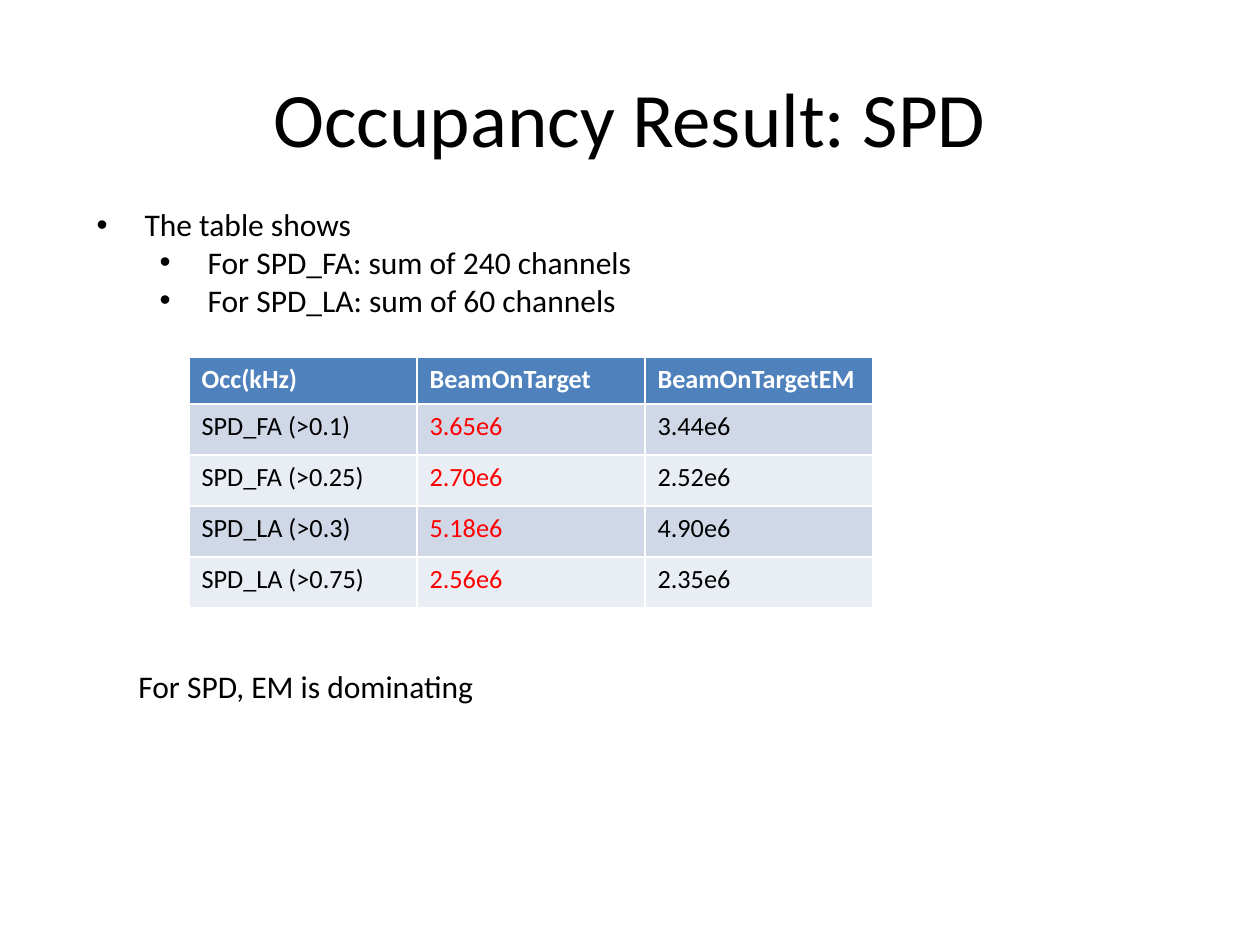
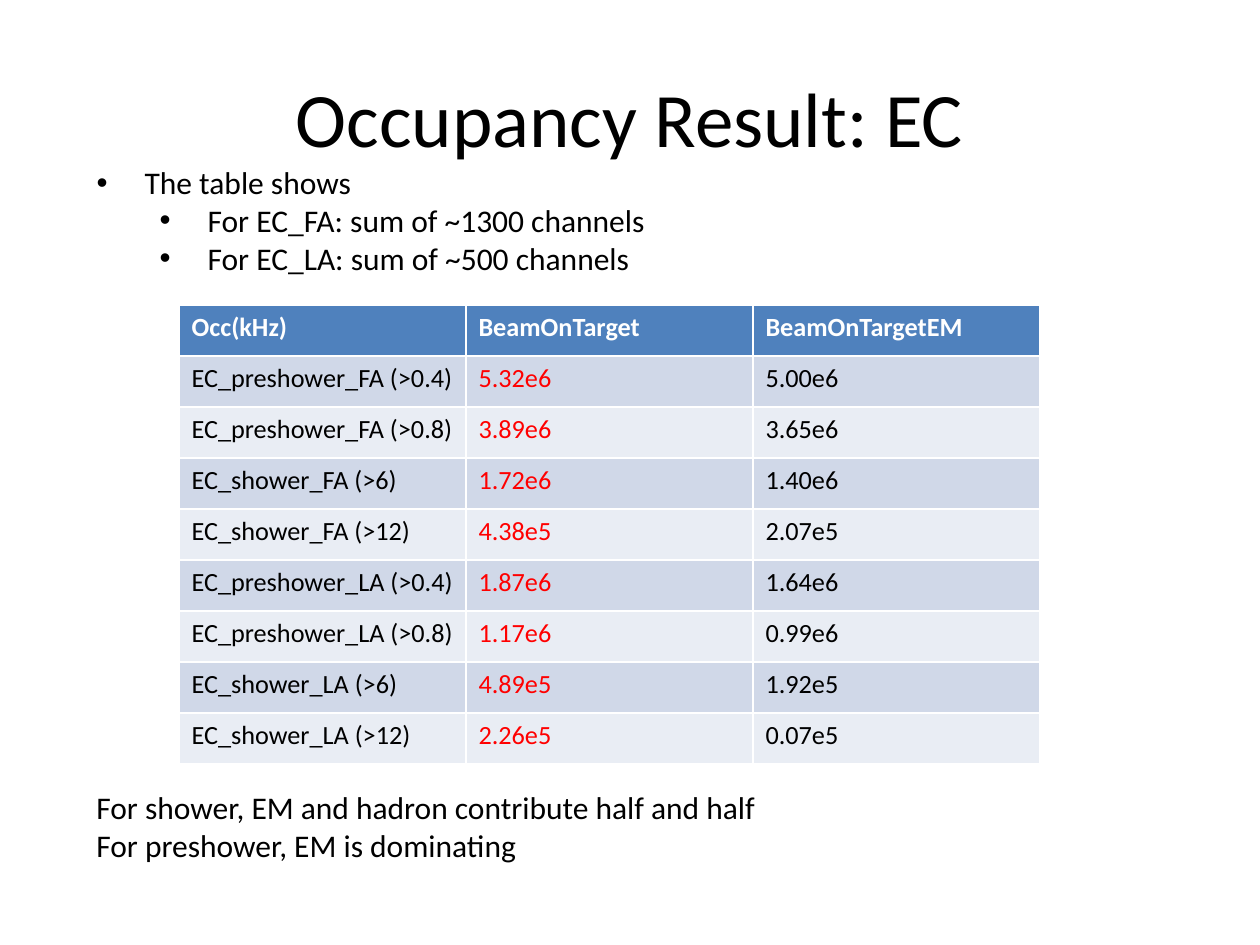
from lxml.etree import SubElement
from pptx import Presentation
from pptx.dml.color import RGBColor
from pptx.enum.text import MSO_ANCHOR, MSO_AUTO_SIZE, PP_ALIGN
from pptx.oxml.ns import qn
from pptx.util import Emu, Pt

PIXELS_PER_INCH = 126
EMU_PER_INCH = 914400
FONT_NAME = "Calibri"

BLACK = RGBColor(0x00, 0x00, 0x00)
WHITE = RGBColor(0xFF, 0xFF, 0xFF)
RED = RGBColor(0xFF, 0x00, 0x00)
HEADER_BLUE = RGBColor(0x4F, 0x81, 0xBD)
BAND_COLORS = [RGBColor(0xE9, 0xED, 0xF4), RGBColor(0xD0, 0xD8, 0xE8)]

TITLE_FORMAT = {"name": FONT_NAME, "size": Pt(44), "bold": False}
BODY_FORMAT = {"name": FONT_NAME, "size": Pt(18), "bold": False}
HEADER_FORMAT = {"name": FONT_NAME, "size": Pt(15), "bold": True}
CELL_FORMAT = {**HEADER_FORMAT, "bold": False}

TABLE_HEADER = ["Occ(kHz)", "BeamOnTarget", "BeamOnTargetEM"]
COLUMN_COLORS = [BLACK, RED, BLACK]
ROW_HEIGHT = 51
TEXT_WIDTH = 892
NOTE_INDENT = 63
BULLET_INDENTS = {1: 111, 2: 174}
BULLET_HANGING = 48

SPD_ROWS = [
    ["SPD_FA (>0.1)", "3.65e6", "3.44e6"],
    ["SPD_FA (>0.25)", "2.70e6", "2.52e6"],
    ["SPD_LA (>0.3)", "5.18e6", "4.90e6"],
    ["SPD_LA (>0.75)", "2.56e6", "2.35e6"],
]
EC_ROWS = [
    ["EC_preshower_FA (>0.4)", "5.32e6", "5.00e6"],
    ["EC_preshower_FA (>0.8)", "3.89e6", "3.65e6"],
    ["EC_shower_FA (>6)", "1.72e6", "1.40e6"],
    ["EC_shower_FA (>12)", "4.38e5", "2.07e5"],
    ["EC_preshower_LA (>0.4)", "1.87e6", "1.64e6"],
    ["EC_preshower_LA (>0.8)", "1.17e6", "0.99e6"],
    ["EC_shower_LA (>6)", "4.89e5", "1.92e5"],
    ["EC_shower_LA (>12)", "2.26e5", "0.07e5"],
]


def px(length):
    return Emu(round(length * EMU_PER_INCH / PIXELS_PER_INCH))


def set_attributes(target, values):
    for name, value in values.items():
        setattr(target, name, value)


def place(shape, left, top, width, height):
    set_attributes(shape, {"left": px(left), "top": px(top), "width": px(width), "height": px(height)})


def write_run(paragraph, text, font_format, color):
    run = paragraph.add_run()
    run.text = text
    set_attributes(run.font, font_format)
    run.font.color.rgb = color


def write_lines(text_frame, lines):
    set_attributes(text_frame, {"word_wrap": True, "auto_size": MSO_AUTO_SIZE.SHAPE_TO_FIT_TEXT})
    for index, (level, text) in enumerate(lines):
        paragraph = text_frame.add_paragraph() if index else text_frame.paragraphs[0]
        set_attributes(paragraph, {"level": level, "space_before": Pt(0), "alignment": PP_ALIGN.LEFT})
        write_run(paragraph, text, BODY_FORMAT, BLACK)


def add_title(slide, text):
    title = slide.shapes.title
    place(title, 63, 38, 1134, 158)
    title.text_frame.vertical_anchor = MSO_ANCHOR.MIDDLE
    paragraph = title.text_frame.paragraphs[0]
    paragraph.alignment = PP_ALIGN.CENTER
    write_run(paragraph, text, TITLE_FORMAT, BLACK)


def add_bullets(slide, top, lines):
    body = slide.placeholders[1]
    place(body, 21, top, TEXT_WIDTH, 127)
    write_lines(body.text_frame, lines)
    for paragraph in body.text_frame.paragraphs:
        properties = paragraph._p.get_or_add_pPr()
        properties.set("marL", str(px(BULLET_INDENTS[paragraph.level])))
        properties.set("indent", str(px(-BULLET_HANGING)))
        SubElement(properties, qn("a:buFont")).set("typeface", "Arial")
        SubElement(properties, qn("a:buChar")).set("char", "•")


def add_notes(slide, left, top, height, lines):
    box = slide.shapes.add_textbox(px(left), px(top), px(TEXT_WIDTH), px(height))
    write_lines(box.text_frame, [(1, line) for line in lines])
    for paragraph in box.text_frame.paragraphs:
        properties = paragraph._p.get_or_add_pPr()
        properties.set("marL", str(px(NOTE_INDENT)))
        properties.set("indent", "0")


def write_cell(cell, text, font_format, color, fill_color):
    cell.fill.solid()
    cell.fill.fore_color.rgb = fill_color
    write_run(cell.text_frame.paragraphs[0], text, font_format, color)


def add_occupancy_table(slide, left, top, column_width, header_height, rows):
    column_count = len(TABLE_HEADER)
    table = slide.shapes.add_table(
        len(rows) + 1, column_count, px(left), px(top),
        px(column_width * column_count), px(header_height + ROW_HEIGHT * len(rows)),
    ).table
    for column in table.columns:
        column.width = px(column_width)
    for row in table.rows:
        row.height = px(ROW_HEIGHT)
    table.rows[0].height = px(header_height)
    for column_index, text in enumerate(TABLE_HEADER):
        write_cell(table.cell(0, column_index), text, HEADER_FORMAT, WHITE, HEADER_BLUE)
    for row_index, values in enumerate(rows, start=1):
        for column_index, text in enumerate(values):
            write_cell(table.cell(row_index, column_index), text, CELL_FORMAT,
                       COLUMN_COLORS[column_index], BAND_COLORS[row_index % 2])


def add_titled_slide(presentation, title):
    slide = presentation.slides.add_slide(presentation.slide_layouts[1])
    add_title(slide, title)
    return slide


def main():
    presentation = Presentation()
    set_attributes(presentation, {"slide_width": px(1260), "slide_height": px(945)})

    spd_slide = add_titled_slide(presentation, "Occupancy Result: SPD")
    add_occupancy_table(spd_slide, 189, 357, 228, 47, SPD_ROWS)
    add_bullets(spd_slide, 199, [
        (1, "The table shows"),
        (2, "For SPD_FA: sum of 240 channels"),
        (2, "For SPD_LA: sum of 60 channels"),
    ])
    add_notes(spd_slide, 63, 661, 51, ["For SPD, EM is dominating"])

    ec_slide = add_titled_slide(presentation, "Occupancy Result: EC")
    add_occupancy_table(ec_slide, 179, 305, 287, ROW_HEIGHT, EC_ROWS)
    add_bullets(ec_slide, 157, [
        (1, "The table shows"),
        (2, "For EC_FA: sum of ~1300 channels"),
        (2, "For EC_LA: sum of ~500 channels"),
    ])
    add_notes(ec_slide, 21, 782, 89, [
        "For shower, EM and hadron contribute half and half",
        "For preshower, EM is dominating",
    ])

    presentation.save("out.pptx")


if __name__ == "__main__":
    main()
